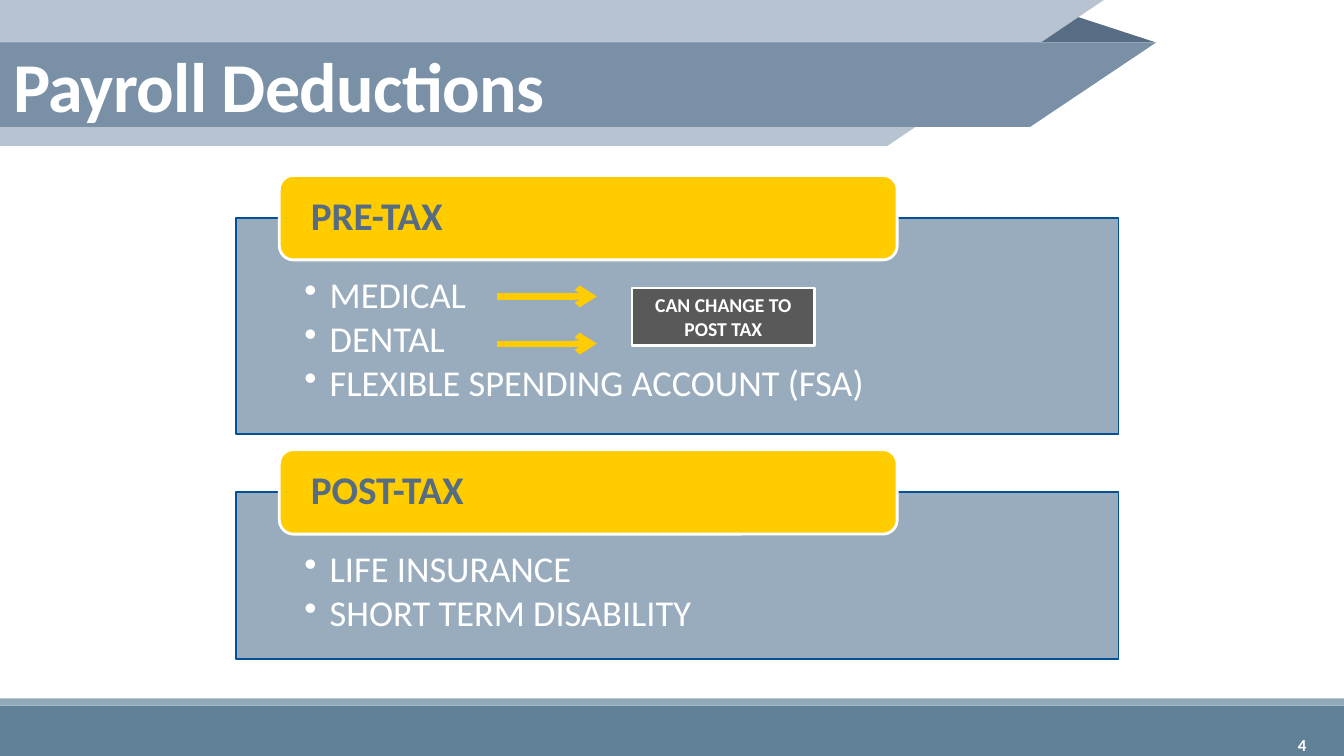
from dataclasses import dataclass

from lxml.etree import SubElement
from pptx import Presentation
from pptx.dml.color import RGBColor
from pptx.enum.shapes import MSO_CONNECTOR, MSO_SHAPE
from pptx.enum.text import MSO_ANCHOR, PP_ALIGN
from pptx.oxml.ns import qn
from pptx.util import Cm, Pt


@dataclass(frozen=True)
class Theme:
    font: str = "Calibri"
    white: str = "FFFFFF"
    gold: str = "FFCC00"
    slate: str = "566C83"
    fold: str = "566D83"
    ribbon: str = "7990A7"
    ribbon_back: str = "B7C3D0"
    panel: str = "8FA3B6"
    panel_edge: str = "025198"
    note: str = "595959"
    footer: str = "618197"
    footer_edge: str = "92A9B9"
    title_size: int = 50
    heading_size: int = 28
    item_size: int = 26
    note_size: int = 14
    page_size: int = 12


THEME = Theme()
PANEL_LEFT, PANEL_WIDTH = 5.94, 22.25
HEADING_LEFT, HEADING_WIDTH, HEADING_HEIGHT = 7.04, 15.57, 2.13
SECTIONS = [
    # heading, heading top, panel height, items
    ("PRE-TAX", 4.42, 5.46, ["MEDICAL", "DENTAL", "FLEXIBLE SPENDING ACCOUNT (FSA)"]),
    ("POST-TAX", 11.33, 4.22, ["LIFE INSURANCE", "SHORT TERM DISABILITY"]),
]


def rgb(color):
    return RGBColor.from_string(color)


def add_block(slide, preset, box, fill, edge=None, edge_width=0):
    block = slide.shapes.add_shape(preset, *map(Cm, box))
    block.shadow.inherit = False
    block.fill.solid()
    block.fill.fore_color.rgb = rgb(fill)
    if edge:
        block.line.color.rgb = rgb(edge)
        block.line.width = Pt(edge_width)
    else:
        block.line.fill.background()
    return block


def set_up_frame(frame, margins, anchor=MSO_ANCHOR.TOP):
    """Margins run left, top, right, bottom in centimetres."""
    frame.word_wrap = True
    frame.vertical_anchor = anchor
    (frame.margin_left, frame.margin_top,
     frame.margin_right, frame.margin_bottom) = map(Cm, margins)


def style_paragraph(paragraph, size, color, bold=False, align=PP_ALIGN.LEFT, spacing=1.0):
    paragraph.alignment = align
    paragraph.line_spacing = spacing
    font = paragraph.font
    font.name, font.size, font.bold = THEME.font, Pt(size), bold
    font.color.rgb = rgb(color)


def add_bullet(paragraph):
    properties = paragraph._p.get_or_add_pPr()
    properties.set("marL", str(Cm(0.64)))
    properties.set("indent", str(Cm(-0.64)))
    SubElement(properties, qn("a:buChar")).set("char", "•")


def add_ribbon(slide, top, body_width, tip_width, height, color):
    """Draw a band from the left edge whose right end slants inwards."""
    add_block(slide, MSO_SHAPE.RECTANGLE, (0, top, body_width, height), color)
    tip = add_block(slide, MSO_SHAPE.RIGHT_TRIANGLE,
                    (body_width, top, tip_width, height), color)
    tip._element.spPr.xfrm.set("flipV", "1")


def add_section(slide, heading, top, panel_height, items):
    panel = add_block(slide, MSO_SHAPE.RECTANGLE,
                      (PANEL_LEFT, top + HEADING_HEIGHT / 2, PANEL_WIDTH, panel_height),
                      THEME.panel, THEME.panel_edge, 1.25)
    panel_color = panel.fill._xPr.find(qn("a:solidFill"))[0]
    SubElement(panel_color, qn("a:alpha")).set("val", "90000")
    frame = panel.text_frame
    set_up_frame(frame, (1.73, 1.5, 1.73, 0.5))
    for index, item in enumerate(items):
        paragraph = frame.add_paragraph() if index else frame.paragraphs[0]
        paragraph.text = item
        add_bullet(paragraph)
        style_paragraph(paragraph, THEME.item_size, THEME.white, spacing=0.9)
        paragraph.space_after = Pt(3.5)

    tab = add_block(slide, MSO_SHAPE.ROUNDED_RECTANGLE,
                    (HEADING_LEFT, top, HEADING_WIDTH, HEADING_HEIGHT),
                    THEME.gold, THEME.white, 2)
    set_up_frame(tab.text_frame, (0.69, 0.1, 0.69, 0.1), MSO_ANCHOR.MIDDLE)
    tab.text_frame.text = heading
    style_paragraph(tab.text_frame.paragraphs[0], THEME.heading_size, THEME.slate,
                    bold=True, spacing=0.9)


def add_note(slide, text, box):
    note = add_block(slide, MSO_SHAPE.RECTANGLE, box, THEME.note, THEME.white, 2)
    set_up_frame(note.text_frame, (0.25, 0.13, 0.25, 0.13))
    note.text_frame.text = text
    style_paragraph(note.text_frame.paragraphs[0], THEME.note_size, THEME.white,
                    bold=True, align=PP_ALIGN.CENTER)


def add_arrow(slide, left, right, y):
    arrow = slide.shapes.add_connector(MSO_CONNECTOR.STRAIGHT,
                                       Cm(left), Cm(y), Cm(right), Cm(y))
    arrow.line.color.rgb = rgb(THEME.gold)
    arrow.line.width = Pt(4.5)
    SubElement(arrow.line._get_or_add_ln(), qn("a:tailEnd")).set("type", "arrow")
    SubElement(arrow._element.spPr, qn("a:effectLst"))


def add_title(slide, text):
    frame = slide.shapes.add_textbox(Cm(0.08), Cm(1.27), Cm(31), Cm(2.72)).text_frame
    set_up_frame(frame, (0.25, 0.13, 0.25, 0.13))
    frame.text = text
    title = frame.paragraphs[0]
    style_paragraph(title, THEME.title_size, THEME.white, bold=True, spacing=0.85)
    title._p.pPr.find(qn("a:defRPr")).set("spc", "-50")


def add_page_number(slide, number):
    frame = slide.shapes.add_textbox(Cm(29.54), Cm(18.26), Cm(3.63), Cm(1.02)).text_frame
    set_up_frame(frame, (0.25, 0.13, 0.25, 0.13), MSO_ANCHOR.MIDDLE)
    frame.text = number
    style_paragraph(frame.paragraphs[0], THEME.page_size, THEME.white,
                    bold=True, align=PP_ALIGN.RIGHT)


def main():
    deck = Presentation()
    deck.slide_width, deck.slide_height = Cm(33.87), Cm(19.05)
    slide = deck.slides.add_slide(deck.slide_layouts[6])

    add_block(slide, MSO_SHAPE.RECTANGLE, (0, 17.78, 33.87, 1.27), THEME.footer)
    add_block(slide, MSO_SHAPE.RECTANGLE, (0, 17.6, 33.87, 0.18), THEME.footer_edge)
    fold = add_block(slide, MSO_SHAPE.ISOSCELES_TRIANGLE, (25.93, 0.36, 3.2, 0.71), THEME.fold)
    fold.adjustments[0] = 0.32
    add_ribbon(slide, 0, 22.36, 5.46, 3.68, THEME.ribbon_back)
    add_ribbon(slide, 1.07, 25.96, 3.18, 2.13, THEME.ribbon)

    for section in SECTIONS:
        add_section(slide, *section)
    add_note(slide, "CAN CHANGE TO POST TAX", (15.93, 7.26, 4.6, 1.45))
    for y in (7.47, 8.66):
        add_arrow(slide, 12.52, 15.04, y)

    add_title(slide, "Payroll Deductions")
    add_page_number(slide, "4")
    deck.save("out.pptx")


if __name__ == "__main__":
    main()
